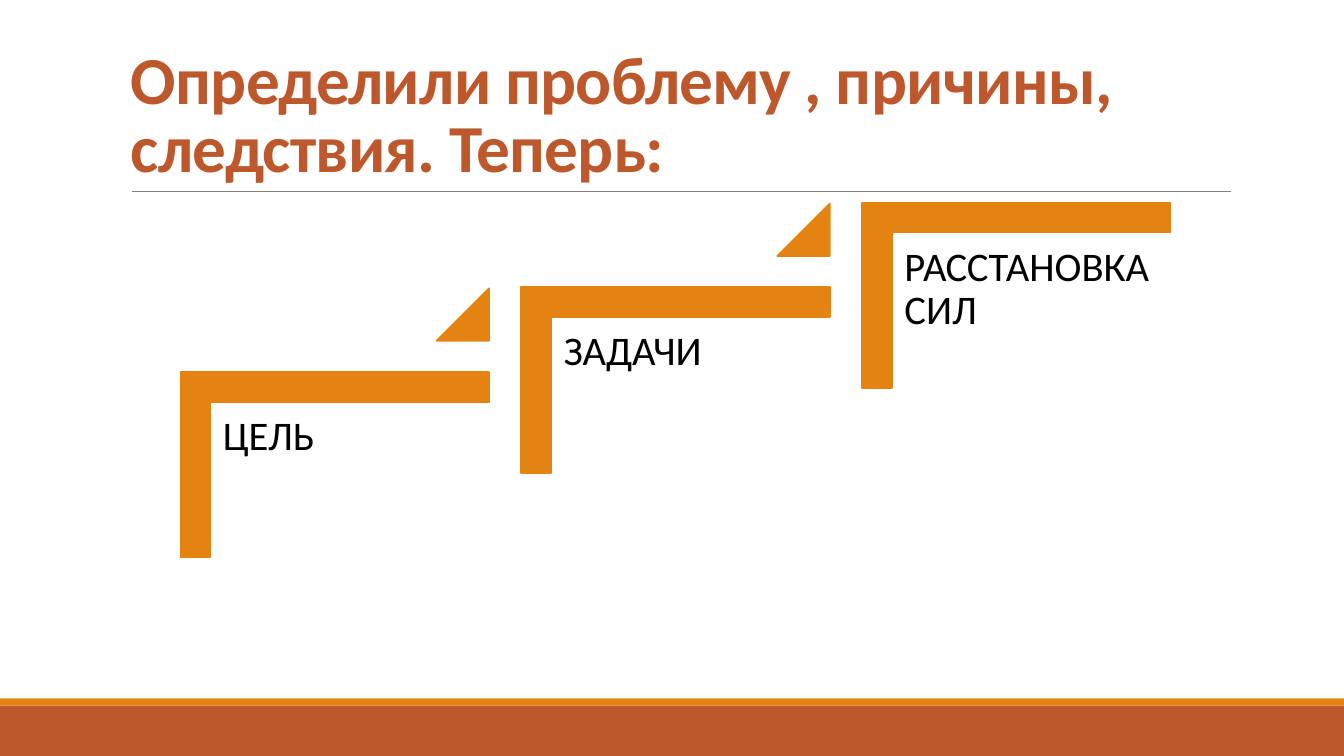
import pptx
import pptx.dml.color
import pptx.enum.shapes
import pptx.enum.text
import pptx.oxml
import pptx.oxml.ns
import pptx.util

Inches = pptx.util.Inches
Pt = pptx.util.Pt
SHAPES = pptx.enum.shapes.MSO_SHAPE
ANCHORS = pptx.enum.text.MSO_ANCHOR

COLORS = {"rust": "BD582C", "orange": "E48312", "rule": "808080", "text": "000000"}
HEADING = "Определили проблему , причины, следствия. Теперь:"
STEPS = ["ЦЕЛЬ", "ЗАДАЧИ", "РАССТАНОВКА СИЛ"]
FOOTER = [("rust", 7, 0.5), ("orange", 6.93, 0.07)]

SLIDE_SIZE = (13.33, 7.5)
RULE = (1.31, 1.9, 12.21, 1.9)
HEADING_BOX = (1.2, 0.25, 11, 1.65)
STEP_RIGHT, STEP_UP = 3.38, 0.84
CORNER_BOX = (2.4, 3.08, 1.84, 3.06)
LABEL_BOX = (2.09, 4, 2.76, 2.42)
ARROW_BOX = (4.33, 2.86, 0.52, 0.52)

HEADING_FORMAT = {
    "frame": {"vertical_anchor": ANCHORS.BOTTOM},
    "paragraph": {"line_spacing": 0.85},
    "font": {"size": Pt(48), "bold": True},
}
LABEL_FORMAT = {
    "frame": dict.fromkeys(
        ("margin_left", "margin_right", "margin_top", "margin_bottom"), Inches(0.12)
    ),
    "paragraph": {"line_spacing": 0.9},
    "font": {"size": Pt(29)},
}


def color(name):
    return pptx.dml.color.RGBColor.from_string(COLORS[name])


def apply(target, values):
    for attribute, value in values.items():
        setattr(target, attribute, value)


def raised(box, level):
    left, top, width, height = box
    return left + level * STEP_RIGHT, top - level * STEP_UP, width, height


def add_filled(slide, kind, box, fill, outline=None, rotation=0, adjustments=()):
    shape = slide.shapes.add_shape(kind, *map(Inches, box))
    shape.shadow.inherit = False
    shape.rotation = rotation
    shape.fill.solid()
    shape.fill.fore_color.rgb = color(fill)
    if outline is None:
        shape.line.fill.background()
    else:
        shape.line.color.rgb = color(fill)
        shape.line.width = Pt(outline)
    for index, value in enumerate(adjustments):
        shape.adjustments[index] = value


def add_words(slide, words, box, formats, fill):
    frame = slide.shapes.add_textbox(*map(Inches, box)).text_frame
    paragraph = frame.paragraphs[0]
    run = paragraph.add_run()
    run.text = words
    apply(frame, {"word_wrap": True, **formats["frame"]})
    apply(paragraph, formats["paragraph"])
    apply(run.font, {"name": "Calibri", **formats["font"]})
    run.font.color.rgb = color(fill)
    return run


def add_rule(slide):
    rule = slide.shapes.add_connector(
        pptx.enum.shapes.MSO_CONNECTOR.STRAIGHT, *map(Inches, RULE)
    )
    rule.line.color.rgb = color("rule")
    rule.line.width = Pt(0.5)
    rule._element.spPr.append(
        pptx.oxml.parse_xml(f"<a:effectLst {pptx.oxml.ns.nsdecls('a')}/>")
    )


def main():
    deck = pptx.Presentation()
    deck.slide_width, deck.slide_height = map(Inches, SLIDE_SIZE)
    slide = deck.slides.add_slide(deck.slide_layouts[6])

    for fill, top, height in FOOTER:
        add_filled(slide, SHAPES.RECTANGLE, (0, top, SLIDE_SIZE[0], height), fill)
    add_rule(slide)
    heading = add_words(slide, HEADING, HEADING_BOX, HEADING_FORMAT, "rust")
    heading._r.get_or_add_rPr().set("spc", "-50")

    for level, label in enumerate(STEPS):
        add_filled(slide, SHAPES.CORNER, raised(CORNER_BOX, level), "orange",
                   outline=1.25, rotation=90, adjustments=(0.161, 0.161))
        add_words(slide, label, raised(LABEL_BOX, level), LABEL_FORMAT, "text")
        if level < len(STEPS) - 1:
            add_filled(slide, SHAPES.ISOSCELES_TRIANGLE, raised(ARROW_BOX, level),
                       "orange", outline=1.25, adjustments=(1,))

    deck.save("out.pptx")


if __name__ == "__main__":
    main()
